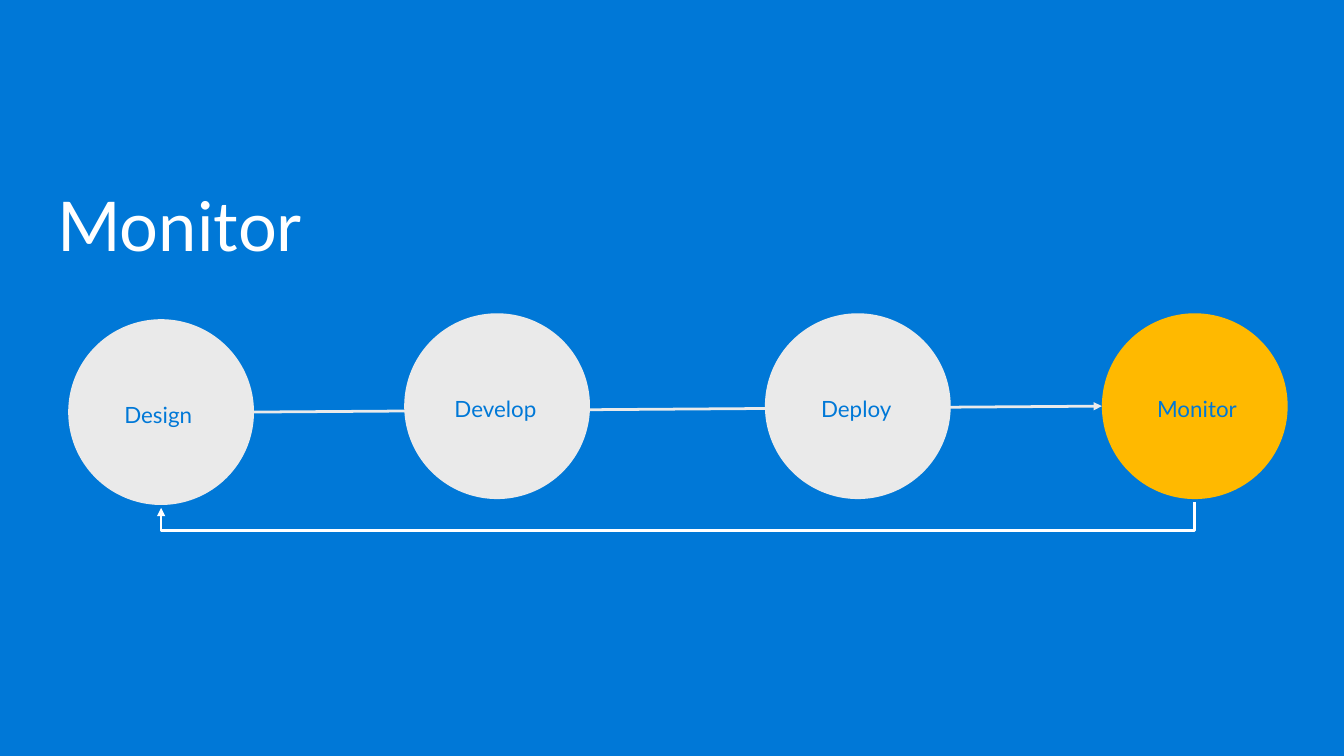
from lxml.etree import SubElement
from pptx import Presentation
from pptx.dml.color import RGBColor
from pptx.enum.shapes import MSO_CONNECTOR, MSO_SHAPE
from pptx.enum.text import MSO_ANCHOR, MSO_AUTO_SIZE, PP_ALIGN
from pptx.oxml.ns import qn
from pptx.util import Inches, Pt

TITLE = "Monitor"
# name, circle left, circle top, label left, label width, fill
STEPS = [
    ("Design", 0.69, 3.23, 1.16, 0.94, "grey"),
    ("Develop", 4.09, 3.17, 4.5, 1.05, "grey"),
    ("Deploy", 7.74, 3.17, 8.21, 0.99, "grey"),
    ("Monitor", 11.15, 3.17, 11.61, 1.15, "gold"),
]
COLORS = {"blue": "0078D7", "grey": "EAEAEA", "gold": "FFB900", "white": "FFFFFF"}
WIDE, HIGH = 13.6, 7.65
SIZE = 1.88        # circle diameter
DROP = 0.73        # label top below circle top
GAP = 0.03         # space between a circle and the return arrow
BEND = 4.77        # depth of the return arrow, as a share of its rise


def color(name):
    return RGBColor.from_string(COLORS[name])


def write(shape, text, size, tint, pads, spacing=None):
    frame = shape.text_frame
    style = {
        "word_wrap": True, "auto_size": MSO_AUTO_SIZE.NONE,
        "vertical_anchor": MSO_ANCHOR.TOP,
        "margin_left": Inches(pads[0]), "margin_right": Inches(pads[0]),
        "margin_top": Inches(pads[1]), "margin_bottom": Inches(pads[1]),
    }
    for key, value in style.items():
        setattr(frame, key, value)
    frame.text = text
    line = frame.paragraphs[0]
    line.alignment = PP_ALIGN.LEFT
    line.line_spacing = spacing
    font = line.runs[0].font
    font.name, font.size = "Lato", Pt(size)
    font.color.rgb = color(tint)


def arrow(slide, kind, start, end, tint):
    link = slide.shapes.add_connector(kind, *map(Inches, start + end))
    link.line.color.rgb = color(tint)
    link.line.width = Pt(2)
    SubElement(link.line._get_or_add_ln(), qn("a:tailEnd"), type="triangle")
    SubElement(link._element.spPr, qn("a:effectLst"))
    return link


def turn(link, start, end):
    """Turn an elbow so that it leaves downward and bends below both ends."""
    rise, run = end[1] - start[1], start[0] - end[0]
    link.left = Inches((start[0] + end[0] - rise) / 2)
    link.top = Inches((start[1] + end[1] - run) / 2)
    link.width, link.height = Inches(rise), Inches(run)
    props = link._element.spPr
    frame = props.find(qn("a:xfrm"))
    for flip in ("flipH", "flipV"):
        frame.attrib.pop(flip, None)
    frame.set("rot", str(90 * 60000))
    guides = props.find(qn("a:prstGeom")).find(qn("a:avLst"))
    SubElement(guides, qn("a:gd"), name="adj1", fmla=f"val {round(BEND * 100000)}")


def main():
    deck = Presentation()
    deck.slide_width, deck.slide_height = Inches(WIDE), Inches(HIGH)
    slide = deck.slides.add_slide(deck.slide_layouts[5])
    slide.background.fill.solid()
    slide.background.fill.fore_color.rgb = color("blue")

    title = slide.shapes.title
    spot = {"left": 0.38, "top": 1.79, "width": 10.08, "height": 2}
    for key, value in spot.items():
        setattr(title, key, Inches(value))
    write(title, TITLE, 50, "white", (0.2, 0.16), 0.9)

    for name, left, top, _, _, fill in STEPS:
        disc = slide.shapes.add_shape(
            MSO_SHAPE.OVAL, *map(Inches, (left, top, SIZE, SIZE)))
        disc.shadow.inherit = False
        disc.fill.solid()
        disc.fill.fore_color.rgb = color(fill)
        disc.line.fill.background()

    first, last = STEPS[0][1:3], STEPS[-1][1:3]
    half = SIZE / 2
    arrow(slide, MSO_CONNECTOR.STRAIGHT, (first[0] + SIZE, first[1] + half),
          (last[0], last[1] + half), "grey")
    start, end = [(x + half, y + SIZE + GAP) for x, y in (last, first)]
    back = arrow(slide, MSO_CONNECTOR.ELBOW, start, end, "white")
    turn(back, start, end)

    for name, _, top, left, width, _ in STEPS:
        label = slide.shapes.add_textbox(
            *map(Inches, (left, top + DROP, width, 0.42)))
        write(label, name, 16.3, "blue", (0.1, 0.1))

    deck.save("out.pptx")


if __name__ == "__main__":
    main()
